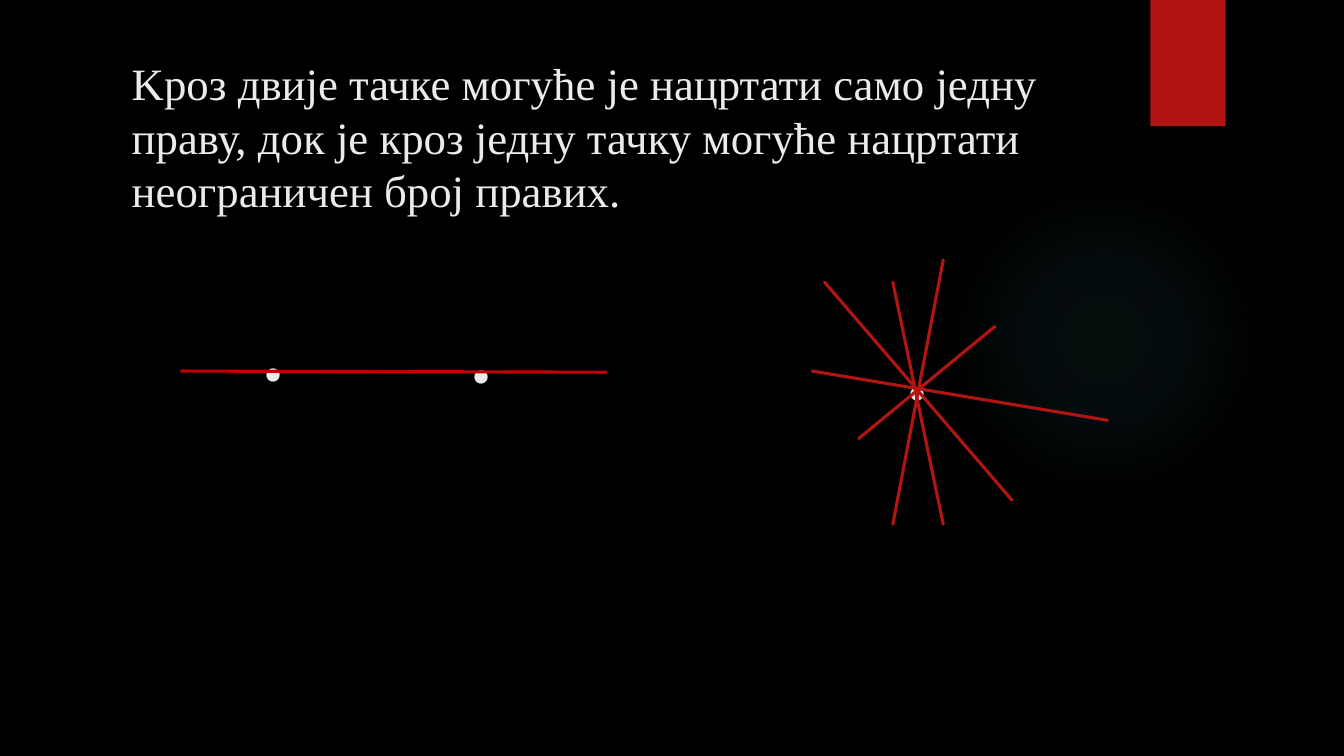
from lxml.etree import SubElement
from pptx import Presentation
from pptx.dml.color import RGBColor
from pptx.enum.shapes import MSO_CONNECTOR, MSO_SHAPE
from pptx.enum.text import MSO_ANCHOR, MSO_AUTO_SIZE, PP_ALIGN
from pptx.oxml import parse_xml
from pptx.oxml.ns import nsdecls, qn
from pptx.util import Cm, Pt

FONT = "Times New Roman"
BLACK, WHITE, RED, DARK_RED, TEAL = "000000", "EBEBEB", "B01513", "C00000", "50B9C1"
TITLE = ("Kроз двије тачке могуће је нацртати само једну праву, "
         "док је кроз једну тачку могуће нацртати неограничен број правих.")


def rgb(color):
    return RGBColor.from_string(color)


def add_text(tf, text, size):
    tf.word_wrap = True
    tf.auto_size = MSO_AUTO_SIZE.NONE
    tf.vertical_anchor = MSO_ANCHOR.TOP
    tf.margin_left = tf.margin_right = Cm(0.25)
    tf.margin_top = tf.margin_bottom = Cm(0.13)
    p = tf.paragraphs[0]
    p.alignment = PP_ALIGN.LEFT
    r = p.add_run()
    r.text = text
    r.font.name, r.font.size = FONT, Pt(size)
    r.font.color.rgb = rgb(WHITE)


def add_plain_shape(s, kind, x, y, w, h, color):
    sp = s.shapes.add_shape(kind, Cm(x), Cm(y), Cm(w), Cm(h))
    sp.shadow.inherit = False
    sp.line.fill.background()
    sp.fill.solid()
    sp.fill.fore_color.rgb = rgb(color)
    return sp


def add_glow(s, x, y, size):
    """Circle whose faint colour fades out from the centre."""
    sp = add_plain_shape(s, MSO_SHAPE.OVAL, x, y, size, size, TEAL)
    stops = "".join(
        f'<a:gs pos="{pos}000"><a:srgbClr val="{TEAL}">'
        f'<a:alpha val="{alpha}000"/></a:srgbClr></a:gs>'
        for pos, alpha in ((0, 7), (36, 6), (69, 0), (100, 0)))
    grad = parse_xml(
        f'<a:gradFill {nsdecls("a")}><a:gsLst>{stops}</a:gsLst><a:path path="circle">'
        '<a:fillToRect l="50000" t="50000" r="50000" b="50000"/></a:path></a:gradFill>')
    props = sp._element.spPr
    props.replace(props.find(qn("a:solidFill")), grad)


def add_title(s, x, y, w, h):
    title = s.shapes.title
    title.left, title.top, title.width, title.height = Cm(x), Cm(y), Cm(w), Cm(h)
    add_text(title.text_frame, TITLE, 32)


def add_point(s, x, y, h):
    """Point drawn as a large full stop."""
    box = s.shapes.add_textbox(Cm(x), Cm(y), Cm(1.27), Cm(h))
    add_text(box.text_frame, ".", 80)


def add_line(s, x1, y1, x2, y2, color):
    line = s.shapes.add_connector(MSO_CONNECTOR.STRAIGHT, Cm(x1), Cm(y1), Cm(x2), Cm(y2))
    line.line.width = Pt(2.25)
    line.line.color.rgb = rgb(color)
    line.line._get_or_add_ln().set("cap", "rnd")
    SubElement(line._element.spPr, qn("a:effectLst"))


def add_line_through_two_points(s, x, y, w):
    add_point(s, x + 1.73, y - 2.72, 3.89)
    add_point(s, x + 6.96, y - 2.67, 3.89)
    add_line(s, x, y, x + w, y + 0.03, DARK_RED)


def add_lines_through_one_point(s, x, y, w, h):
    add_point(s, x + 2.05, y + 0.56, 2.9)
    for x1, y1, x2, y2 in ((3.3, 0, 2.03, h), (0.31, 0.56, 5.03, 6.05),
                           (4.6, 1.68, 1.17, 4.5), (0, 2.8, w, 4.04),
                           (2.03, 0.56, 3.3, h)):
        add_line(s, x + x1, y + y1, x + x2, y + y2, RED)


def main():
    prs = Presentation()
    prs.slide_width, prs.slide_height = Cm(33.87), Cm(19.05)
    s = prs.slides.add_slide(prs.slide_layouts[5])
    s.background.fill.solid()
    s.background.fill.fore_color.rgb = rgb(BLACK)
    add_glow(s, 23.9, 4.65, 7.82)
    add_plain_shape(s, MSO_SHAPE.RECTANGLE, 28.99, 0, 1.9, 3.18, RED)
    add_title(s, 3.07, 1.27, 24.87, 4.4)
    add_line_through_two_points(s, 4.57, 9.35, 10.7)
    add_lines_through_one_point(s, 20.47, 6.55, 7.44, 6.66)
    prs.save("out.pptx")


if __name__ == "__main__":
    main()
